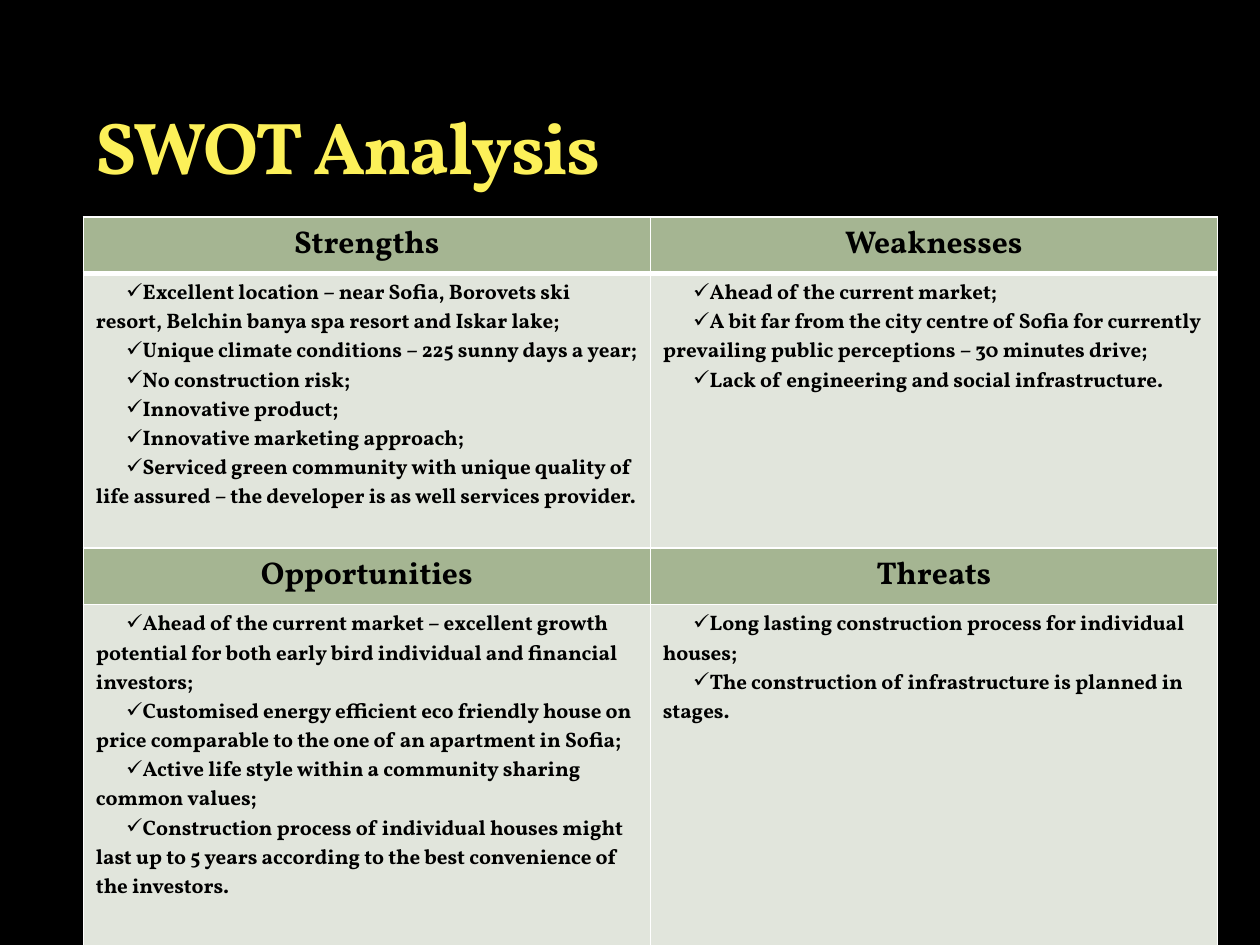
from lxml import etree
from pptx import Presentation
from pptx.dml.color import RGBColor
from pptx.enum.text import MSO_ANCHOR, PP_ALIGN
from pptx.oxml.ns import qn
from pptx.util import Cm, Pt

CENTER, LEFT = PP_ALIGN.CENTER, PP_ALIGN.LEFT
BOTTOM = MSO_ANCHOR.BOTTOM

TITLE = "SWOT Analysis"
SWOT = [
    [
        ("Strengths", [
            "Excellent location – near Sofia, Borovets ski resort, Belchin banya spa resort and Iskar lake;",
            "Unique climate conditions – 225 sunny days a year;",
            "No construction risk;",
            "Innovative product;",
            "Innovative marketing approach;",
            "Serviced green community with unique quality of life assured – the developer is as well services provider.",
        ]),
        ("Weaknesses", [
            "Ahead of the current market;",
            "A bit far from the city centre of Sofia for currently prevailing public perceptions – 30 minutes drive;",
            "Lack of engineering and social infrastructure.",
        ]),
    ],
    [
        ("Opportunities", [
            "Ahead of the current market – excellent growth potential for both early bird individual and financial investors;",
            "Customised energy efficient eco friendly house on price comparable to the one of an apartment in Sofia;",
            "Active life style within a community sharing common values;",
            "Construction process of individual houses might last up to 5 years according to the best convenience of the investors.",
        ]),
        ("Threats", [
            "Long lasting construction process for individual houses;",
            "The construction of infrastructure is planned in stages.",
        ]),
    ],
]

THEME = {
    "font": "Vollkorn",
    "back": "000000", "title": "FCF059", "text": "000000",
    "head": "A5B592", "body": "E1E5DC", "line": "FFFFFF",
    "title_size": 42, "head_size": 18, "body_size": 12,
}
LEFT_X, WIDE = Cm(1.68), Cm(22.86)
TITLE_Y, TITLE_H = Cm(0.56), Cm(3.38)
GRID_Y = Cm(4.37)
ROWS = [Cm(1.12), Cm(5.54), Cm(1.14), Cm(6.9)]
INDENT = Cm(0.61)


def color(key):
    return RGBColor.from_string(THEME[key])


def style(para, size, ink, align=LEFT):
    para.alignment = align
    font = para.font
    font.name, font.bold = THEME["font"], True
    font.size, font.color.rgb = Pt(THEME[size]), color(ink)


def add_check(para):
    props = para._p.get_or_add_pPr()
    props.set("marL", "0")
    props.set("indent", str(INDENT))
    mark = etree.Element(qn("a:buChar"), char="✓")
    # Bullets must come before the default run properties.
    props.insert(0, mark)


def add_edges(cell, thick):
    """Line all four sides; thick is the width of the bottom one in points."""
    props = cell._tc.get_or_add_tcPr()
    for i, side in enumerate("LRTB"):
        width = Pt(thick if side == "B" else 1)
        edge = etree.Element(qn("a:ln" + side), w=str(width))
        fill = etree.SubElement(edge, qn("a:solidFill"))
        etree.SubElement(fill, qn("a:srgbClr"), val=THEME["line"])
        props.insert(i, edge)


def fill_cell(cell, lines, kind, thick=1):
    cell.fill.solid()
    cell.fill.fore_color.rgb = color(kind)
    add_edges(cell, thick)
    frame = cell.text_frame
    frame.text = "\n".join(lines)
    for para in frame.paragraphs:
        if kind == "head":
            style(para, "head_size", "text", CENTER)
        else:
            style(para, "body_size", "text")
            add_check(para)


def add_title(slide):
    box = slide.shapes.add_textbox(LEFT_X, TITLE_Y, WIDE, TITLE_H)
    frame = box.text_frame
    frame.word_wrap, frame.vertical_anchor = True, BOTTOM
    frame.text = TITLE
    para = frame.paragraphs[0]
    style(para, "title_size", "title")
    para.runs[0]._r.get_or_add_rPr().set("spc", "-100")


def add_grid(slide):
    grid = slide.shapes.add_table(
        len(ROWS), 2, LEFT_X, GRID_Y, WIDE, sum(ROWS)).table
    grid.horz_banding = grid.first_row = False
    for row, high in zip(grid.rows, ROWS):
        row.height = high
    for i, pair in enumerate(SWOT):
        for col, (head, points) in enumerate(pair):
            fill_cell(grid.cell(2 * i, col), [head], "head", 1 if i else 3)
            fill_cell(grid.cell(2 * i + 1, col), points, "body")
    # The rule under the first heads is shared with the cells below it.
    for col in range(2):
        top = grid.cell(1, col)._tc.tcPr.find(qn("a:lnT"))
        top.set("w", str(Pt(3)))


def main():
    deck = Presentation()
    deck.slide_width, deck.slide_height = Cm(25.4), Cm(19.05)
    slide = deck.slides.add_slide(deck.slide_layouts[6])
    back = slide.background.fill
    back.solid()
    back.fore_color.rgb = color("back")
    add_grid(slide)
    add_title(slide)
    deck.save("out.pptx")


if __name__ == "__main__":
    main()
